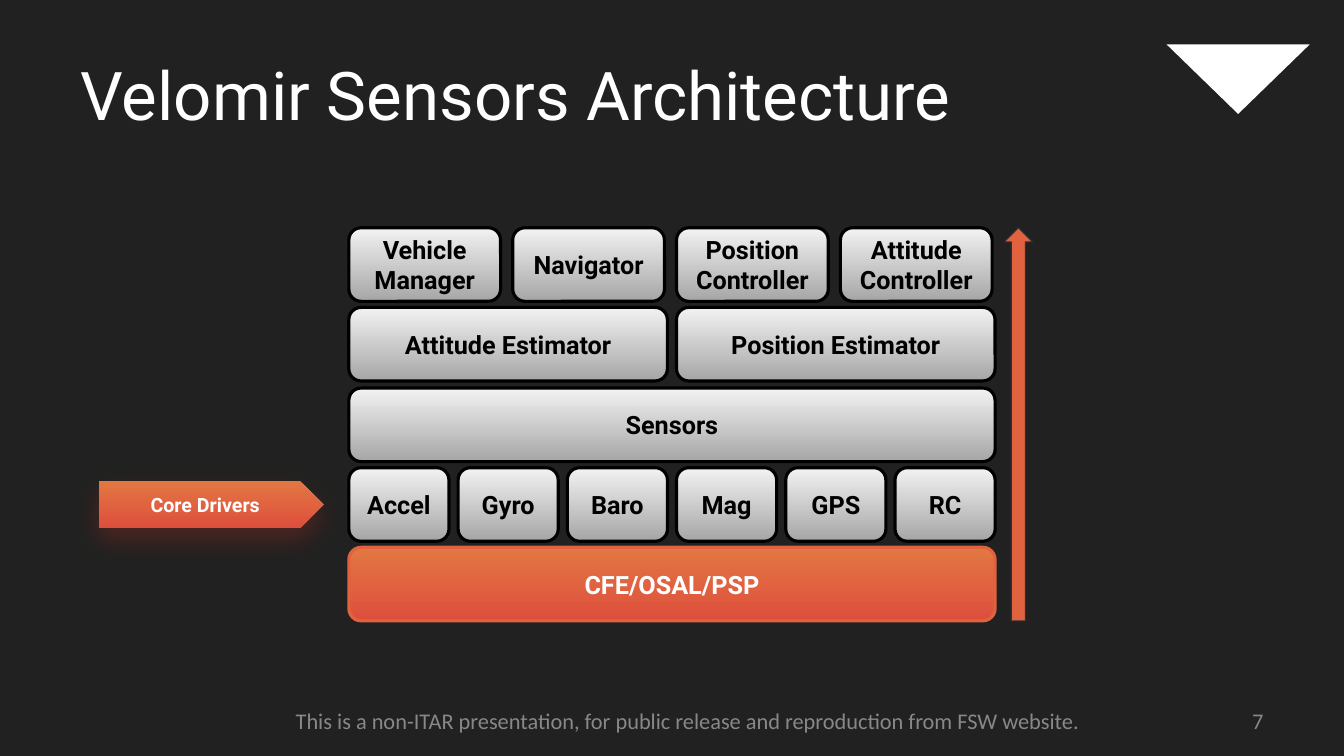
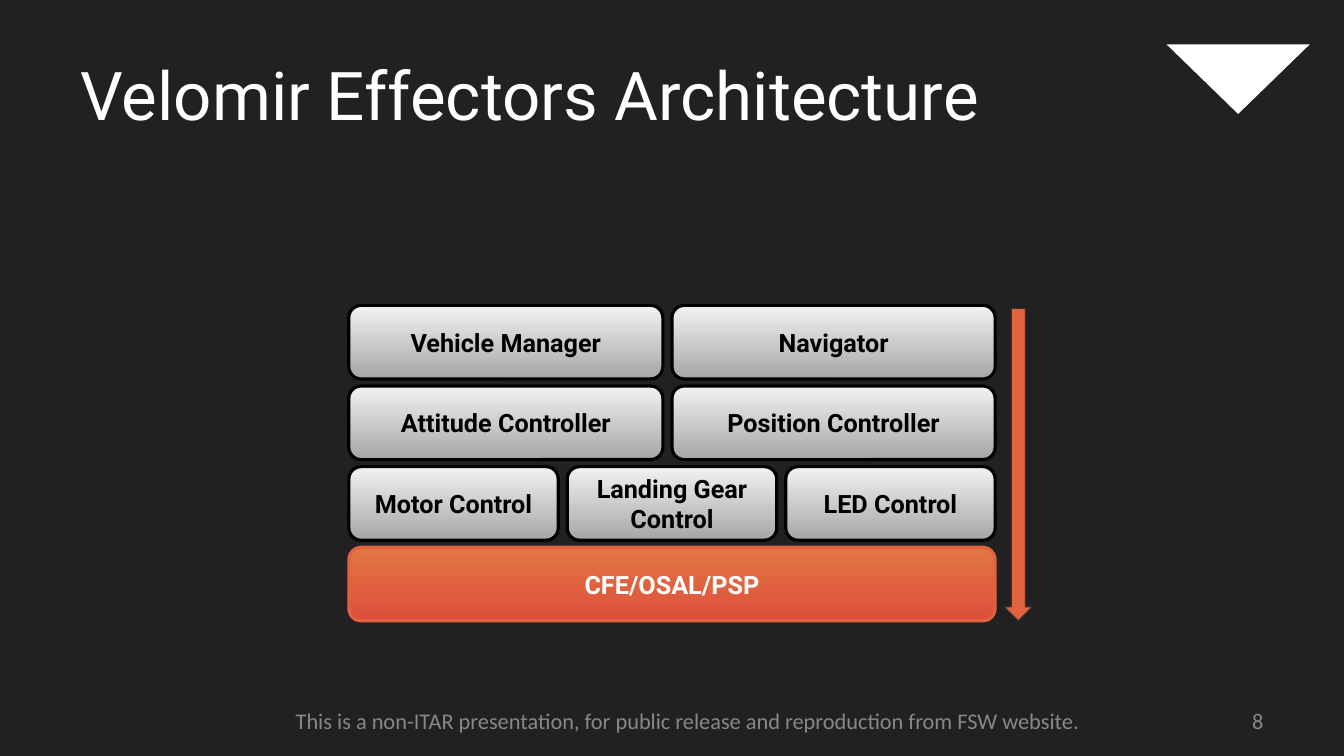
from lxml import etree
from pptx import Presentation
from pptx.dml.color import RGBColor
from pptx.enum import shapes, text
from pptx.oxml import ns
from pptx.util import Pt

PX = 9144  # 100 px to the inch

DARK = RGBColor(0x21, 0x21, 0x21)
WHITE = RGBColor(0xFF, 0xFF, 0xFF)
BLACK = RGBColor(0x00, 0x00, 0x00)
GREY = RGBColor(0x88, 0x88, 0x88)
EDGE = RGBColor(0x30, 0x30, 0x30)
RUST = RGBColor(0xE0, 0x62, 0x3F)
STEEL = RGBColor(0xF2, 0xF2, 0xF2), RGBColor(0xA6, 0xA6, 0xA6)
FLAME = RGBColor(0xE3, 0x77, 0x43), RGBColor(0xDD, 0x4F, 0x3C)

KIND = shapes.MSO_SHAPE
LEFT, MID, RIGHT = text.PP_ALIGN.LEFT, text.PP_ALIGN.CENTER, text.PP_ALIGN.RIGHT
FOOT = "This is a non-ITAR presentation, for public release and reproduction from FSW website."

X, WIDE, HIGH = 346, 641, 73  # the stack of blocks
BASE = 543
END = 616  # foot of the stack and of the arrow

# Each row: top, width, gap, shares of the width, names
SENSE = [
    (226, 638, 12, (1, 1, 1, 1),
     ("Vehicle Manager", "Navigator", "Position Controller", "Attitude Controller")),
    (305, WIDE, 9, (1, 1), ("Attitude Estimator", "Position Estimator")),
    (385, WIDE, 9, (1,), ("Sensors",)),
    (464, WIDE, 9, (1,) * 6, ("Accel", "Gyro", "Baro", "Mag", "GPS", "RC")),
]
EFFECT = [
    (303, WIDE, 9, (311, 320), ("Vehicle Manager", "Navigator")),
    (383, WIDE, 9, (311, 320), ("Attitude Controller", "Position Controller")),
    (463, WIDE, 9, (1, 1, 1), ("Motor Control", "Landing Gear Control", "LED Control")),
]
# Each slide: number, title, rows, arrow shape, arrow top
DECK = [
    ("7", "Velomir Sensors Architecture", SENSE, KIND.UP_ARROW, 226),
    ("8", "Velomir Effectors Architecture", EFFECT, KIND.DOWN_ARROW, 306),
]


def write(shape, words, size, face, ink, align=MID, bold=False, inset=(10, 10)):
    frame = shape.text_frame
    frame.word_wrap = True
    frame.vertical_anchor = text.MSO_ANCHOR.MIDDLE
    frame.margin_left = frame.margin_right = inset[0] * PX
    frame.margin_top = frame.margin_bottom = inset[1] * PX
    para = frame.paragraphs[0]
    para.alignment = align
    run = para.add_run()
    run.text = words
    run.font.size = Pt(size)
    run.font.name = face
    run.font.bold = bold
    run.font.color.rgb = ink


def draw(slide, kind, box, paint, line=None, weight=2.25):
    """Add a preset shape; a pair of colours paints it from top to bottom."""
    shape = slide.shapes.add_shape(kind, *(round(n * PX) for n in box))
    shape.shadow.inherit = False
    if isinstance(paint, RGBColor):
        shape.fill.solid()
        shape.fill.fore_color.rgb = paint
    else:
        shape.fill.gradient()
        shape.fill.gradient_angle = 270
        for stop, tone in zip(shape.fill.gradient_stops, paint):
            stop.color.rgb = tone
    if line is None:
        shape.line.fill.background()
    else:
        shape.line.color.rgb = line
        shape.line.width = Pt(weight)
    return shape


prs = Presentation()
prs.slide_width, prs.slide_height = 1333 * PX, 750 * PX
back = prs.slide_master.background.fill
back.solid()
back.fore_color.rgb = DARK

for page, title, rows, arrow, top in DECK:
    slide = prs.slides.add_slide(prs.slide_layouts[6])
    draw(slide, KIND.FLOWCHART_MERGE, (1157, 44, 142, 69), WHITE)

    for box, words, size, face, ink, align in (
        ((209, 695, 946, 40), FOOT, 16, "Calibri", GREY, MID),
        ((67, 30, 1200, 125), title, 48, "Roboto", WHITE, LEFT),
        ((955, 695, 311, 40), page, 16, "Calibri", GREY, RIGHT),
    ):
        label = slide.shapes.add_textbox(*(n * PX for n in box))
        write(label, words, size, face, ink, align, inset=(13, 7))

    base = draw(slide, KIND.ROUNDED_RECTANGLE, (X, BASE, WIDE, HIGH), FLAME, RUST)
    write(base, "CFE/OSAL/PSP", 18, "Roboto", WHITE, bold=True)

    for y, wide, gap, shares, names in rows:
        room = wide - gap * (len(names) - 1)
        x = X
        for share, name in zip(shares, names):
            span = room * share / sum(shares)
            block = draw(slide, KIND.ROUNDED_RECTANGLE, (x, y, span, HIGH), STEEL, BLACK)
            write(block, name, 18, "Roboto", BLACK, bold=True)
            x += span + gap

    draw(slide, arrow, (996, top, 28, END - top), RUST, EDGE, 0.75)

# The tag beside the row of drivers, with a soft glow below it
tag = draw(prs.slides[0], KIND.PENTAGON, (98, 477, 223, 47), FLAME)
write(tag, "Core Drivers", 14, "Roboto", WHITE, bold=True, inset=(0, 0))
glow = etree.SubElement(
    tag.element.spPr.find(ns.qn("a:effectLst")), ns.qn("a:outerShdw"),
    blurRad=str(Pt(17)), dist=str(Pt(8)), dir="5400000", rotWithShape="0")
tone = etree.SubElement(glow, ns.qn("a:srgbClr"), val="B3301F")
etree.SubElement(tone, ns.qn("a:alpha"), val="30000")

prs.save("out.pptx")
